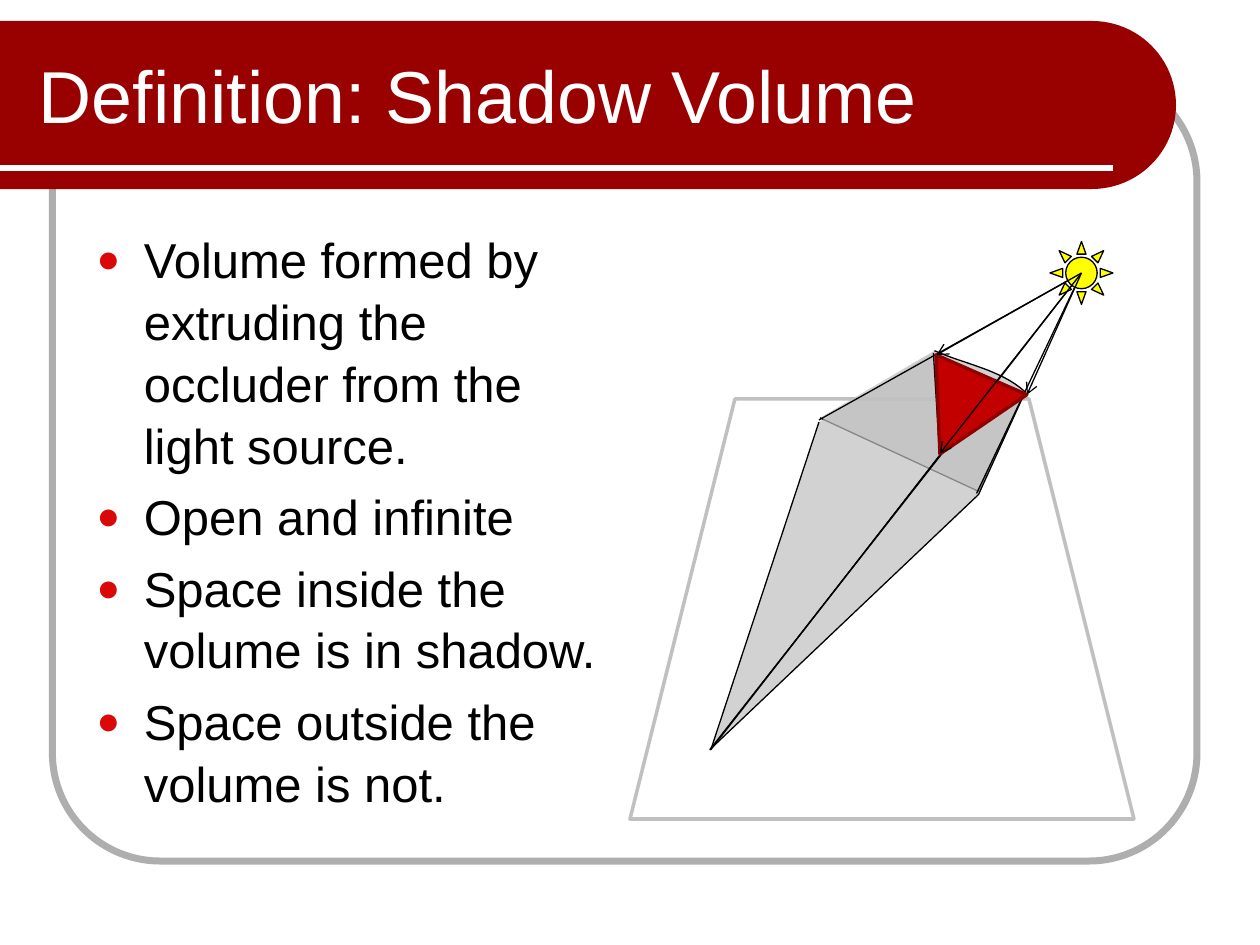
import math

import pptx
import pptx.util
import pptx.dml.color
import pptx.enum.shapes
import pptx.enum.text
import pptx.oxml
import pptx.oxml.ns
from lxml import etree

EMU_PER_PX = 7620
FONT = "Arial"
COLORS = {
    "frame": "AEAEAE",
    "banner": "990000",
    "white": "FFFFFF",
    "black": "000000",
    "shade": "C0C0C0",
    "occluder": "C30000",
    "occluder_edge": "900000",
    "sun": "FFFF00",
    "bullet": "DA0808",
}
LIGHT = (1030, 260)
VOLUME_ENDS = [(680, 710), (780, 400), (930, 470)]
OCCLUDER_CORNERS = [(892, 338), (978, 376), (895, 432)]
BULLETS = [
    "Volume formed by extruding the occluder from the light source.",
    "Open and infinite",
    "Space inside the volume is in shadow.",
    "Space outside the volume is not.",
]
SHAPE = pptx.enum.shapes.MSO_SHAPE


def px(value):
    return pptx.util.Emu(round(value * EMU_PER_PX))


def color(name):
    return pptx.dml.color.RGBColor.from_string(COLORS[name])


def add_element(parent, tag, **attributes):
    element = etree.SubElement(parent, pptx.oxml.ns.qn(tag))
    for name, value in attributes.items():
        element.set(name, str(value))
    return element


def set_fill(shape, name, opacity=100):
    if name is None:
        shape.fill.background()
        return
    shape.fill.solid()
    shape.fill.fore_color.rgb = color(name)
    if opacity < 100:
        swatch = shape.element.spPr.find(".//" + pptx.oxml.ns.qn("a:srgbClr"))
        add_element(swatch, "a:alpha", val=opacity * 1000)


def set_line(shape, name, width):
    if name is None:
        shape.line.fill.background()
        return
    shape.line.color.rgb = color(name)
    shape.line.width = pptx.util.Pt(width)


def add_preset(slide, kind, box, fill, line, width):
    shape = slide.shapes.add_shape(kind, *map(px, box))
    shape.shadow.inherit = False
    set_fill(shape, fill)
    set_line(shape, line, width)
    return shape


def add_freeform(slide, points, fill, opacity=100, line=None, width=0.75, close=False):
    corners = [(px(x), px(y)) for x, y in points]
    builder = slide.shapes.build_freeform(*corners[0])
    builder.add_line_segments(corners[1:], close=close)
    shape = builder.convert_to_shape()
    shape.shadow.inherit = False
    set_fill(shape, fill, opacity)
    set_line(shape, line, width)


def add_line(slide, start, end, name="black", width=0.75, arrow=False):
    connector = slide.shapes.add_connector(
        pptx.enum.shapes.MSO_CONNECTOR.STRAIGHT, *map(px, start + end)
    )
    set_line(connector, name, width)
    properties = connector.element.spPr
    if arrow:
        add_element(properties.find(pptx.oxml.ns.qn("a:ln")), "a:tailEnd", type="arrow")
    add_element(properties, "a:effectLst")


def curve(start, control_a, control_b, end, steps=16):
    points = []
    for step in range(steps + 1):
        t = step / steps
        weights = ((1 - t) ** 3, 3 * t * (1 - t) ** 2, 3 * t * t * (1 - t), t ** 3)
        points.append(tuple(
            sum(weight * value for weight, value in zip(weights, values))
            for values in zip(start, control_a, control_b, end)
        ))
    return points


def half_circle(center_x, center_y, radius, steps=48):
    angles = [math.pi * (step / steps - 0.5) for step in range(steps + 1)]
    return [
        (center_x + radius * math.cos(angle), center_y + radius * math.sin(angle))
        for angle in angles
    ]


def place_text(placeholder, box, anchor):
    placeholder.left, placeholder.top, placeholder.width, placeholder.height = map(px, box)
    frame = placeholder.text_frame
    frame.word_wrap = True
    frame.auto_size = pptx.enum.text.MSO_AUTO_SIZE.NONE
    frame.vertical_anchor = anchor
    siblings = placeholder.element.getparent()
    siblings.append(placeholder.element)
    return frame


def add_run(paragraph, text, size, name):
    paragraph.alignment = pptx.enum.text.PP_ALIGN.LEFT
    run = paragraph.add_run()
    run.text = text
    run.font.name = FONT
    run.font.size = pptx.util.Pt(size)
    run.font.color.rgb = color(name)


def add_bullet(paragraph):
    properties = paragraph._p.get_or_add_pPr()
    properties.set("marL", str(px(45)))
    properties.set("indent", str(px(-45)))
    add_element(add_element(properties, "a:buClr"), "a:srgbClr", val=COLORS["bullet"])
    add_element(properties, "a:buSzPct", val=80000)
    add_element(properties, "a:buFont", typeface=FONT)
    add_element(properties, "a:buChar", char="●")


def fill_title(slide):
    frame = place_text(
        slide.shapes.title, (25, 30, 935, 120), pptx.enum.text.MSO_ANCHOR.MIDDLE
    )
    add_run(frame.paragraphs[0], "Definition: Shadow Volume", 42, "white")


def fill_body(slide):
    frame = place_text(
        slide.placeholders[1], (80, 210, 510, 580), pptx.enum.text.MSO_ANCHOR.TOP
    )
    for index, text in enumerate(BULLETS):
        paragraph = frame.add_paragraph() if index else frame.paragraphs[0]
        add_bullet(paragraph)
        paragraph.line_spacing = 1.05
        paragraph.space_before = pptx.util.Pt(5.6 if index else 0)
        add_run(paragraph, text, 28, "black")


def draw_frame(slide):
    frame = add_preset(
        slide, SHAPE.ROUNDED_RECTANGLE, (50, 70, 1090, 750), None, "frame", 4
    )
    frame.adjustments[0] = 0.137
    banner = [(0, 20)] + half_circle(1040, 100, 80) + [(0, 180)]
    add_freeform(slide, banner, "banner", close=True)
    add_line(slide, (0, 160), (1060, 160), "white", 3)


def draw_volume(slide):
    add_preset(slide, SHAPE.TRAPEZOID, (600, 380, 480, 400), None, "shade", 2)
    far_side = curve((890, 334), (919, 347), (953, 352), (976, 373))
    faces = [
        far_side + [(932, 468), (781, 398)],
        [(889, 336), (895, 434), (677, 714), (780, 402)],
        [(976, 374), (932, 471), (676, 714), (898, 431)],
    ]
    for face in faces:
        add_freeform(slide, face, "shade", 70, "black")
    for end in VOLUME_ENDS:
        add_line(slide, LIGHT, end)
    occluder = add_preset(
        slide, SHAPE.ISOSCELES_TRIANGLE, (864, 331, 100, 80), "occluder", "occluder_edge", 2
    )
    occluder.rotation = 325.7


def draw_light(slide):
    add_preset(slide, SHAPE.SUN, (1000, 230, 60, 60), "sun", "black", 0.75)
    for corner in OCCLUDER_CORNERS:
        add_line(slide, LIGHT, corner, arrow=True)


def main():
    presentation = pptx.Presentation()
    presentation.slide_width, presentation.slide_height = px(1200), px(900)
    slide = presentation.slides.add_slide(presentation.slide_layouts[1])
    draw_frame(slide)
    draw_volume(slide)
    fill_title(slide)
    fill_body(slide)
    draw_light(slide)
    presentation.save("out.pptx")


if __name__ == "__main__":
    main()
